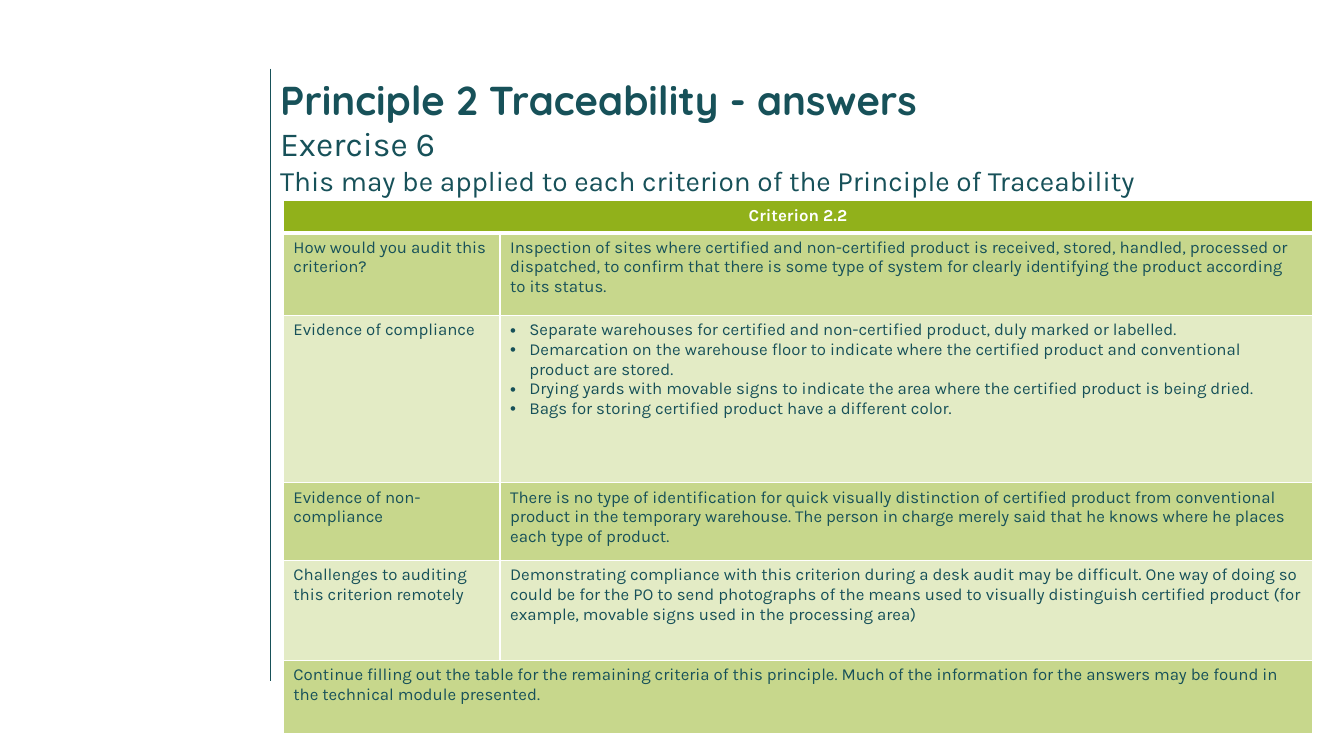
from lxml import etree
from pptx import Presentation
from pptx.dml.color import RGBColor
from pptx.enum.shapes import MSO_CONNECTOR
from pptx.enum.text import MSO_ANCHOR, PP_ALIGN
from pptx.oxml.ns import qn
from pptx.util import Inches, Pt

STRAIGHT = MSO_CONNECTOR.STRAIGHT
TOP = MSO_ANCHOR.TOP
LEFT, CENTER = PP_ALIGN.LEFT, PP_ALIGN.CENTER

TITLE = "Principle 2 Traceability - answers"
EXERCISE = "Exercise 6"
SCOPE = "This may be applied to each criterion of the Principle of Traceability"

# Each row: height in inches, then its cells; a single cell spans the table,
# and a list becomes bullets.
ROWS = [
    (0.32, ["Criterion 2.2"]),
    (0.82, [
        "How would you audit this criterion?",
        "Inspection of sites where certified and non-certified product is received, stored, "
        "handled, processed or dispatched, to confirm that there is some type of system for "
        "clearly identifying the product according to its status.",
    ]),
    (1.66, [
        "Evidence of compliance",
        [
            "Separate warehouses for certified and non-certified product, duly marked or labelled.",
            "Demarcation on the warehouse floor to indicate where the certified product and "
            "conventional product are stored.",
            "Drying yards with movable signs to indicate the area where the certified product "
            "is being dried.",
            "Bags for storing certified product have a different color.",
        ],
    ]),
    (0.77, [
        "Evidence of non-compliance",
        "There is no type of identification for quick visually distinction of certified product "
        "from conventional product in the temporary warehouse. The person in charge merely said "
        "that he knows where he places each type of product.",
    ]),
    (0.99, [
        "Challenges to auditing this criterion remotely",
        "Demonstrating compliance with this criterion during a desk audit may be difficult. One "
        "way of doing so could be for the PO to send photographs of the means used to visually "
        "distinguish certified product (for example, movable signs used in the processing area)",
    ]),
    (0.73, [
        "Continue filling out the table for the remaining criteria of this principle. Much of "
        "the information for the answers may be found in the technical module presented.",
    ]),
]
COLS = [2.15, 8.06]
RULE_X = 2.68

THEME = {
    "teal": "175159", "green": "91B11B", "white": "FFFFFF",
    "head": "Quicksand", "body": "Karla",
    "title": 28.8, "sub": 24, "scope": 20, "cell": 12,
}


def color(name):
    return RGBColor.from_string(THEME[name])


def write(para, text, size, tone="teal", face="body", bold=False, align=LEFT):
    para.alignment = align
    run = para.add_run()
    run.text = text
    look = {"name": THEME[face], "size": Pt(THEME[size]), "bold": bold}
    for key, value in look.items():
        setattr(run.font, key, value)
    run.font.color.rgb = color(tone)


def add_text(slide, box, lines):
    frame = slide.shapes.add_textbox(*map(Inches, box)).text_frame
    frame.word_wrap = True
    frame.vertical_anchor = TOP
    for i, line in enumerate(lines):
        para = frame.add_paragraph() if i else frame.paragraphs[0]
        write(para, **line)


def bullet(para):
    props = para._p.get_or_add_pPr()
    indent = Inches(0.19)
    props.set("marL", str(indent))
    props.set("indent", str(-indent))
    etree.SubElement(props, qn("a:buFont"), typeface="Arial")
    etree.SubElement(props, qn("a:buChar"), char="•")


def paint(cell, alpha):
    cell.fill.solid()
    cell.fill.fore_color.rgb = color("green")
    if alpha < 100:
        tone = cell._tc.tcPr.find(".//" + qn("a:srgbClr"))
        etree.SubElement(tone, qn("a:alpha"), val=str(alpha * 1000))


def border(cell, base):
    """Draw white edges; base is the width of the bottom one in points."""
    props = cell._tc.get_or_add_tcPr()
    for i, (side, width) in enumerate(zip("LRTB", (1, 1, 1, base))):
        line = etree.Element(qn("a:ln" + side), w=str(Pt(width)))
        fill = etree.SubElement(line, qn("a:solidFill"))
        etree.SubElement(fill, qn("a:srgbClr"), val=THEME["white"])
        props.insert(i, line)


def add_grid(slide):
    total = sum(height for height, _ in ROWS)
    box = map(Inches, (2.81, 1.99, sum(COLS), total))
    table = slide.shapes.add_table(len(ROWS), len(COLS), *box).table
    for col, width in zip(table.columns, COLS):
        col.width = Inches(width)
    for r, (height, texts) in enumerate(ROWS):
        table.rows[r].height = Inches(height)
        header = r == 0
        alpha = 100 if header else 50 if r % 2 else 25
        look = {"tone": "white", "bold": True, "align": CENTER} if header else {}
        for c in range(len(COLS)):
            paint(table.cell(r, c), alpha)
            border(table.cell(r, c), 3 if header else 1)
        if len(texts) == 1:
            table.cell(r, 0).merge(table.cell(r, len(COLS) - 1))
        for c, text in enumerate(texts):
            frame = table.cell(r, c).text_frame
            listed = isinstance(text, list)
            for i, item in enumerate(text if listed else [text]):
                para = frame.add_paragraph() if i else frame.paragraphs[0]
                if listed:
                    bullet(para)
                write(para, item, "cell", **look)


def main():
    deck = Presentation()
    deck.slide_width, deck.slide_height = Inches(13.33), Inches(7.5)
    slide = deck.slides.add_slide(deck.slide_layouts[6])

    ends = map(Inches, (RULE_X, 0.68, RULE_X, 6.76))
    rule = slide.shapes.add_connector(STRAIGHT, *ends)
    rule.line.color.rgb = color("teal")
    rule.line.width = Pt(0.5)
    etree.SubElement(rule._element.spPr, qn("a:effectLst"))

    add_text(slide, (RULE_X, 0.7, 10.65, 0.44), [
        {"text": TITLE, "size": "title", "face": "head", "bold": True},
    ])
    add_text(slide, (RULE_X, 1.17, 10.65, 0.82), [
        {"text": EXERCISE, "size": "sub"},
        {"text": SCOPE, "size": "scope"},
    ])
    add_grid(slide)
    deck.save("out.pptx")


if __name__ == "__main__":
    main()
